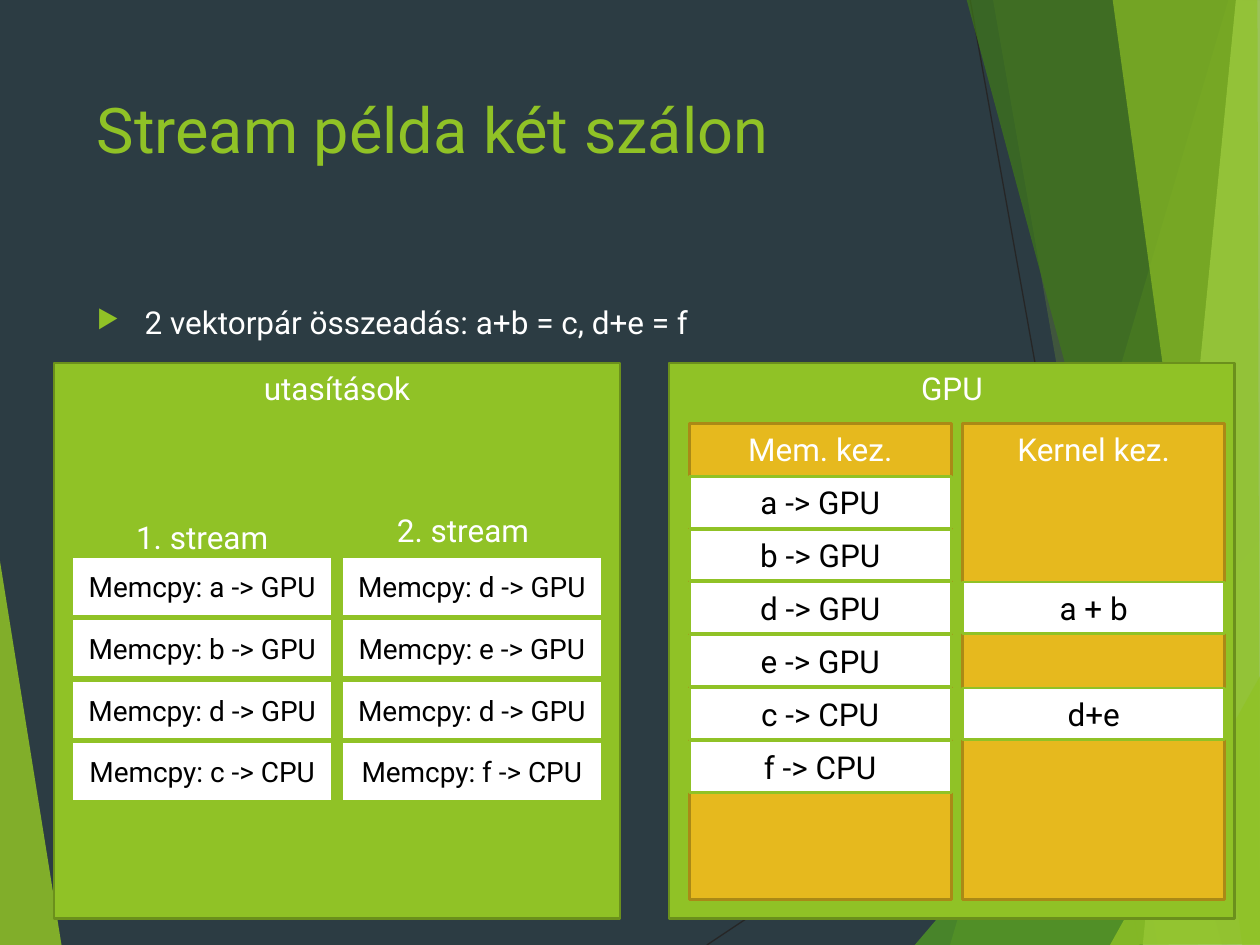
from lxml import etree
from pptx import Presentation
from pptx import util as u
from pptx.dml.color import RGBColor
from pptx.enum import shapes, text
from pptx.oxml.ns import qn

WIDTH, HEIGHT = 10, 7.5
COLORS = {
    "night": "2C3C43", "ink": "262626", "white": "FFFFFF", "black": "000000",
    "lime": "90C226", "lime_edge": "6B901C", "gold": "E6B91E", "gold_edge": "AA8916",
    "leaf": "54A021", "forest": "3F7819", "pale": "C0E474",
}
GRIDS = {
    "panels": {"origin": (0.43, 2.88), "pitch": (4.88, 0), "cell": (4.49, 4.41)},
    "engines": {"origin": (5.47, 3.36), "pitch": (2.17, 0), "cell": (2.08, 3.78)},
    "streams": {"origin": (0.57, 4.42), "pitch": (2.14, 0.49), "cell": (2.07, 0.47)},
    "schedule": {"origin": (5.47, 3.78), "pitch": (2.17, 0.42), "cell": (2.08, 0.41)},
    "labels": {"origin": (0.57, 4.06), "pitch": (2.07, -0.05), "cell": (2.07, 0.4)},
    "heading": {"origin": (0.67, 0.67), "pitch": (0, 1.69), "cell": (6.94, 1.44)},
}
BACKDROP_LINES = [((5.61, 7.5), (10.01, 4.57)), ((7.7, 0), (9.04, 7.5))]
SHARDS = [
    ("lime", 85, [(-0.01, 4.39), (0.49, 7.51), (-0.01, 7.5)]),
    ("lime", 30, [(9.75, 0), (7.54, 7.5), (10.02, 7.51), (10.01, 0.01)]),
    ("lime", 20, [(7.88, -0.01), (9.19, 7.5), (10.01, 7.5), (10.01, -0.01)]),
    ("leaf", 72, [(7.26, 7.5), (10, 4.29), (10.01, 7.5)]),
    ("forest", 70, [(7.67, -0.01), (9.7, 7.5), (10.01, 7.49), (10.01, -0.01)]),
    ("pale", 70, [(9.81, -0.01), (9.07, 7.5), (10.01, 7.5), (10, -0.01)]),
    ("lime", 65, [(8.83, -0.01), (9.86, 7.5), (10, 7.5), (9.98, -0.01)]),
    ("lime", 80, [(8.81, 7.5), (10.01, 5.35), (10.01, 7.49)]),
]
STREAMS = [
    ["a -> GPU", "b -> GPU", "d -> GPU", "c -> CPU"],
    ["d -> GPU", "e -> GPU", "d -> GPU", "f -> CPU"],
]
SCHEDULE = [
    {0: "a -> GPU", 1: "b -> GPU", 2: "d -> GPU", 3: "e -> GPU", 4: "c -> CPU", 5: "f -> CPU"},
    {2: "a + b", 4: "d+e"},
]


def rgb(name):
    return RGBColor.from_string(COLORS[name])


def place(grid, column=0, row=0):
    rule = GRIDS[grid]
    corner = [start + step * index
              for start, step, index in zip(rule["origin"], rule["pitch"], (column, row))]
    return [u.Inches(length) for length in (*corner, *rule["cell"])]


def write(frame, words, size, color, align=text.PP_ALIGN.CENTER, anchor=text.MSO_ANCHOR.TOP):
    frame.word_wrap = True
    frame.vertical_anchor = anchor
    paragraph = frame.paragraphs[0]
    paragraph.alignment = align
    run = paragraph.add_run()
    run.text = words
    for name, value in {"name": "Roboto", "size": u.Pt(size)}.items():
        setattr(run.font, name, value)
    run.font.color.rgb = rgb(color)
    return paragraph


def add_label(slide, spot, words, size=18, color="white", **layout):
    label = slide.shapes.add_textbox(*spot)
    return write(label.text_frame, words, size, color, **layout)


def add_box(slide, spot, words, fill, edge, size=18, color="white", **layout):
    box = slide.shapes.add_shape(shapes.MSO_SHAPE.RECTANGLE, *spot)
    box.shadow.inherit = False
    box.fill.solid()
    box.fill.fore_color.rgb = rgb(fill)
    box.line.color.rgb = rgb(edge)
    box.line.width = u.Pt(1.5)
    write(box.text_frame, words, size, color, **layout)


def add_step(slide, spot, words, size):
    add_box(slide, spot, words, "white", "lime", size, "black", anchor=text.MSO_ANCHOR.MIDDLE)


def add_shard(slide, color, opacity, corners):
    points = [(u.Inches(x), u.Inches(y)) for x, y in corners]
    outline = slide.shapes.build_freeform(*points[0])
    outline.add_line_segments(points[1:], close=True)
    shard = outline.convert_to_shape()
    shard.shadow.inherit = False
    shard.line.fill.background()
    shard.fill.solid()
    shard.fill.fore_color.rgb = rgb(color)
    tint = shard.fill._xPr.find(f".//{qn('a:srgbClr')}")
    etree.SubElement(tint, qn("a:alpha"), val=str(opacity * 1000))


def add_line(slide, start, end):
    ends = [u.Inches(length) for length in (*start, *end)]
    line = slide.shapes.add_connector(shapes.MSO_CONNECTOR.STRAIGHT, *ends)
    line.line.color.rgb = rgb("ink")
    line.line.width = u.Pt(0.75)
    etree.SubElement(line._element.spPr, qn("a:effectLst"))


def add_bullet(paragraph):
    paragraph.space_before = u.Pt(10)
    properties = paragraph._p.get_or_add_pPr()
    for name, inches in {"marL": 0.38, "indent": -0.38}.items():
        properties.set(name, str(u.Inches(inches)))
    tint = etree.SubElement(properties, qn("a:buClr"))
    etree.SubElement(tint, qn("a:srgbClr"), val=COLORS["lime"])
    etree.SubElement(properties, qn("a:buSzPct"), val="80000")
    etree.SubElement(properties, qn("a:buChar"), char="▶")


def add_backdrop(slide):
    slide.background.fill.solid()
    slide.background.fill.fore_color.rgb = rgb("night")
    for start, end in BACKDROP_LINES:
        add_line(slide, start, end)
    for shard in SHARDS:
        add_shard(slide, *shard)


def add_heading(slide):
    left = text.PP_ALIGN.LEFT
    add_label(slide, place("heading"), "Stream példa két szálon", 36, "lime", align=left)
    add_bullet(add_label(slide, place("heading", row=1),
                         "2 vektorpár összeadás: a+b = c, d+e = f", align=left))


def add_diagram(slide):
    for column, title in enumerate(["utasítások", "GPU"]):
        add_box(slide, place("panels", column), title, "lime", "lime_edge")
    for column, title in enumerate(["Mem. kez.", "Kernel kez."]):
        add_box(slide, place("engines", column), title, "gold", "gold_edge")
    for column, copies in enumerate(STREAMS):
        for row, transfer in enumerate(copies):
            add_step(slide, place("streams", column, row), f"Memcpy: {transfer}", 16)
        add_label(slide, place("labels", column, column), f"{column + 1}. stream")
    for column, steps in enumerate(SCHEDULE):
        for row, step in steps.items():
            add_step(slide, place("schedule", column, row), step, 18)


def main():
    deck = Presentation()
    for name, inches in {"slide_width": WIDTH, "slide_height": HEIGHT}.items():
        setattr(deck, name, u.Inches(inches))
    slide = deck.slides.add_slide(deck.slide_layouts[6])
    add_backdrop(slide)
    add_heading(slide)
    add_diagram(slide)
    deck.save("out.pptx")


if __name__ == "__main__":
    main()
